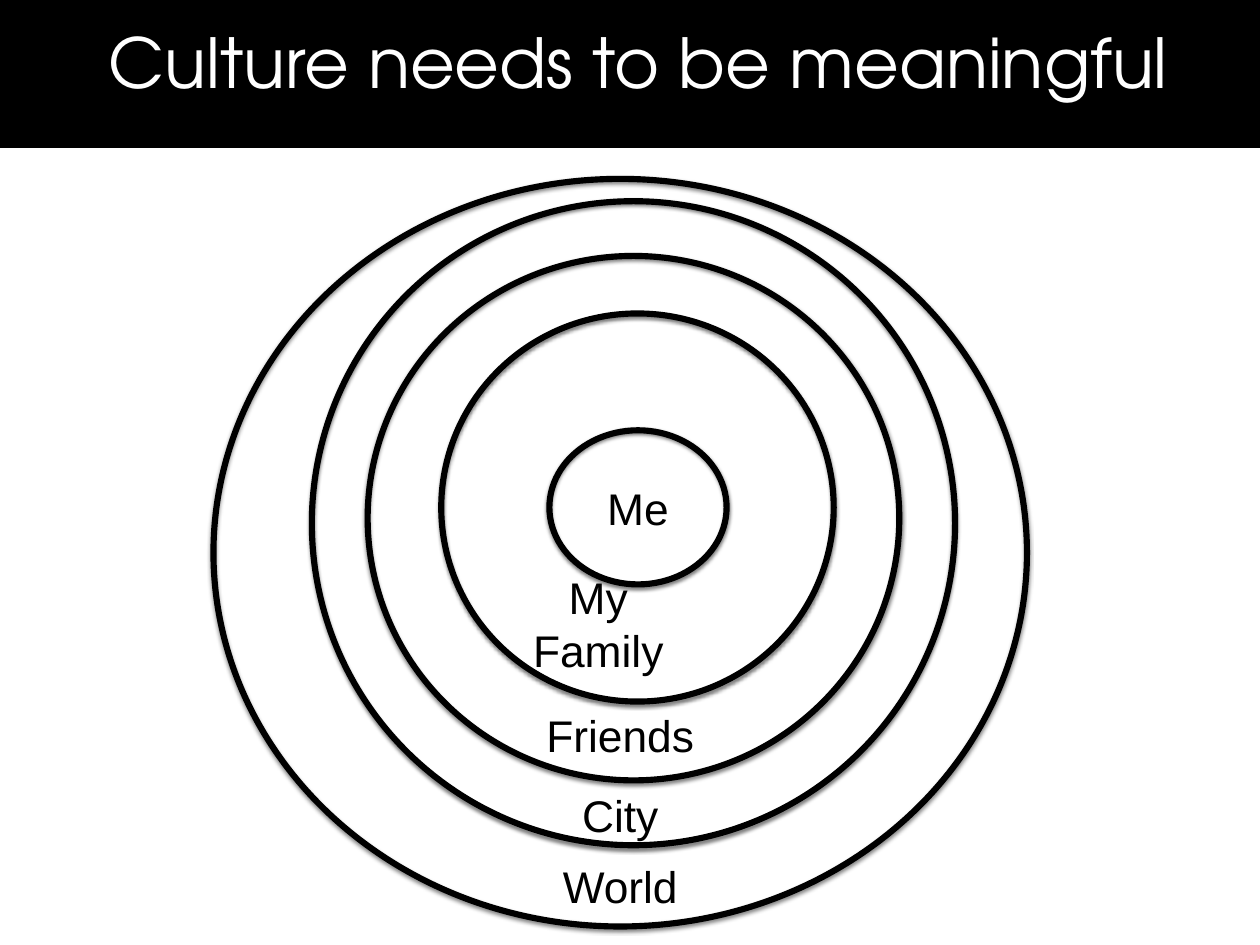
from dataclasses import dataclass

from lxml.etree import SubElement as Sub
from pptx import Presentation as Deck
from pptx.dml.color import RGBColor as Rgb
from pptx.enum.shapes import MSO_SHAPE as Kind
from pptx.enum.text import MSO_ANCHOR as Anchor, MSO_AUTO_SIZE as Fit, PP_ALIGN as Align
from pptx.oxml.ns import qn
from pptx.util import Cm, Pt


@dataclass(frozen=True)
class Theme:
    """Colours, fonts and type sizes of the slide."""
    ink: Rgb = Rgb(0, 0, 0)
    paper: Rgb = Rgb(255, 255, 255)
    head: str = "TeX Gyre Adventor"
    body: str = "Arial"
    big: int = 56
    mid: int = 36
    line: int = 5


THEME = Theme()
RINGS = [
    ("Me", (15.75, 12.34, 5.08, 4.42), (18.29, 14.57, 2.08, 1.8)),
    ("My Family", (12.65, 8.99, 11.25, 11.13), (17.15, 17.88, 4.57, 3.3)),
    ("Friends", (10.54, 7.34, 15.24, 15.04), (17.78, 21.07, 4.55, 1.8)),
    ("City", (8.94, 5.77, 18.44, 18.47), (17.78, 23.38, 2.51, 1.8)),
    ("World", (6.12, 5.13, 23.32, 21.44), (17.78, 25.41, 3.61, 1.8)),
]


def write(frame, text, face, size, color):
    """Put centred text in a frame and format its run."""
    frame.text = text
    frame.vertical_anchor = Anchor.MIDDLE
    frame.margin_left = frame.margin_right = Cm(0.15)
    frame.margin_top = frame.margin_bottom = Cm(0.15)
    para = frame.paragraphs[0]
    para.alignment = Align.CENTER
    font = para.runs[0].font
    font.name, font.size = face, Pt(size)
    font.color.rgb = color


def shade(shape):
    """Give a shape a soft shadow that falls straight down."""
    shape.shadow.inherit = False
    effects = shape._element.spPr.find(qn("a:effectLst"))
    outer = Sub(effects, qn("a:outerShdw"), blurRad=str(Pt(3)), dist=str(Pt(2)),
                dir="5400000", rotWithShape="0")
    tint = Sub(outer, qn("a:srgbClr"), val=str(THEME.ink))
    Sub(tint, qn("a:alpha"), val="50000")


def banner(slide, text):
    """Turn the title placeholder into the dark bar on top."""
    title = slide.shapes.title
    title.left, title.top = Cm(-0.46), Cm(-0.74)
    title.width, title.height = Cm(37.52), Cm(4.98)
    title.fill.solid()
    title.fill.fore_color.rgb = THEME.ink
    write(title.text_frame, text, THEME.head, THEME.big, THEME.paper)
    title.text_frame.auto_size = Fit.NONE


def ring(slide, box):
    """Draw one hollow ellipse."""
    oval = slide.shapes.add_shape(Kind.OVAL, *map(Cm, box))
    oval.fill.background()
    oval.line.color.rgb = THEME.ink
    oval.line.width = Pt(THEME.line)
    shade(oval)


def label(slide, text, spot):
    """Add a label around a centre point; a label of two words wraps."""
    x, y, wide, high = spot
    box = slide.shapes.add_textbox(Cm(x - wide / 2), Cm(y - high / 2), Cm(wide), Cm(high))
    box.text_frame.word_wrap = " " in text
    box.text_frame.auto_size = Fit.SHAPE_TO_FIT_TEXT
    write(box.text_frame, text, THEME.body, THEME.mid, THEME.ink)


def main():
    """Build the slide and save it."""
    deck = Deck()
    deck.slide_width, deck.slide_height = Cm(36.12), Cm(27.1)
    slide = deck.slides.add_slide(deck.slide_layouts[5])
    banner(slide, "Culture needs to be meaningful")
    for name, box, spot in RINGS:
        ring(slide, box)
        label(slide, name, spot)
    deck.save("out.pptx")


if __name__ == "__main__":
    main()
